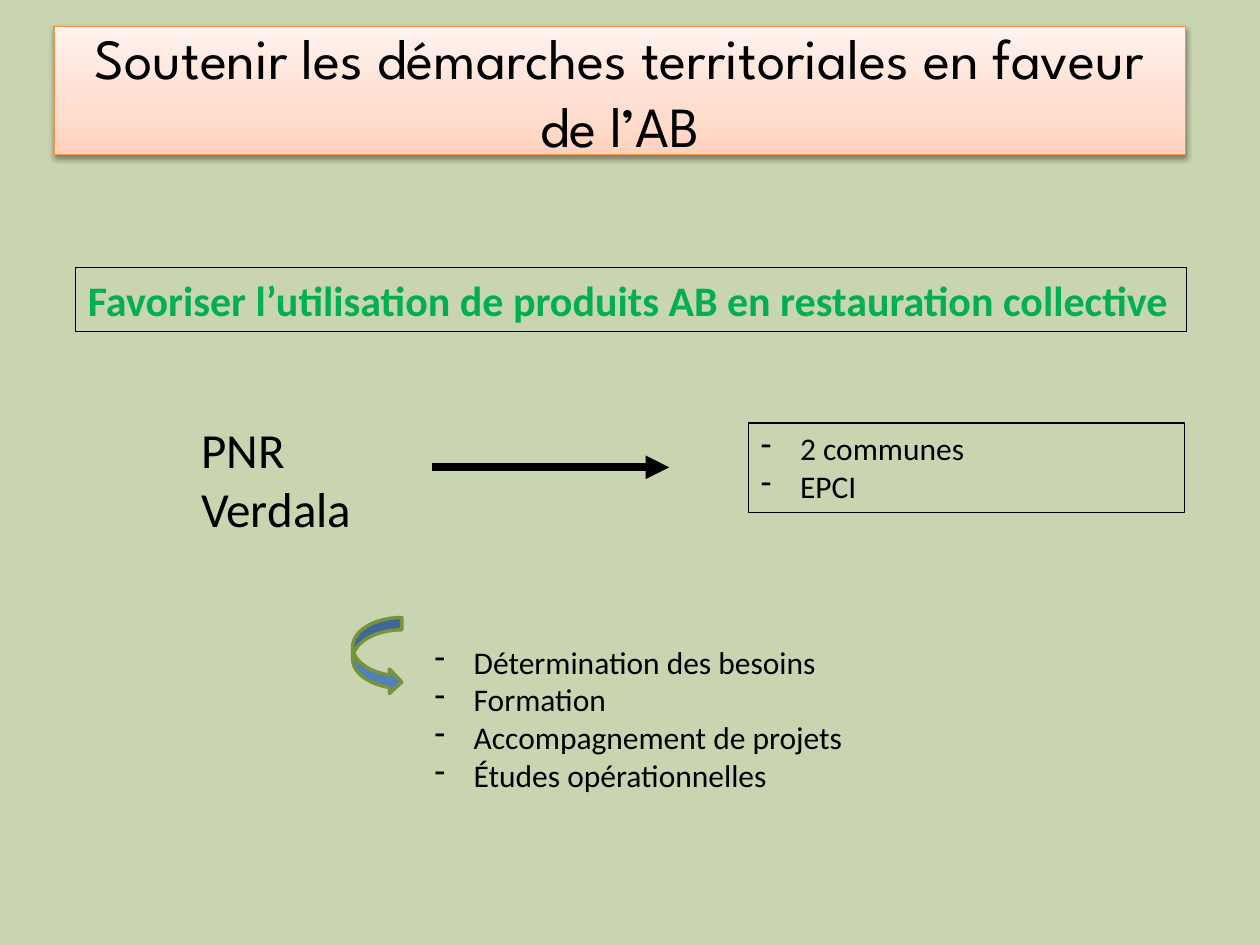
from copy import deepcopy

from lxml.etree import SubElement
from pptx import Presentation
from pptx.dml.color import RGBColor
from pptx.enum.shapes import MSO_CONNECTOR, MSO_SHAPE
from pptx.enum.text import MSO_ANCHOR, PP_ALIGN
from pptx.oxml import parse_xml
from pptx.oxml.ns import nsdecls, qn
from pptx.util import Cm, Pt

SAGE = RGBColor(0xC9, 0xD4, 0xB1)
OLIVE = RGBColor(0x77, 0x93, 0x3C)
BLUE = RGBColor(0x4F, 0x81, 0xBD)
GREEN = RGBColor(0x00, 0xB0, 0x50)
BLACK = RGBColor(0, 0, 0)
ORANGE = RGBColor(0xF6, 0x92, 0x40)
PEACH = [(0, RGBColor(0xFF, 0xD2, 0xBD)), (0.35, RGBColor(0xFF, 0xDE, 0xD0)),
         (1, RGBColor(0xFF, 0xF2, 0xED))]
SHADOW = (f'<a:effectLst {nsdecls("a")}>'
          '<a:outerShdw blurRad="40000" dist="20000" dir="5400000" rotWithShape="0">'
          '<a:srgbClr val="000000"><a:alpha val="38000"/></a:srgbClr>'
          '</a:outerShdw></a:effectLst>')


def add_box(slide, box, line=None, width=0.75, kind=MSO_SHAPE.RECTANGLE):
    shape = slide.shapes.add_shape(kind, *map(Cm, box))
    shape.shadow.inherit = False
    shape.fill.background()
    if line is None:
        shape.line.fill.background()
    else:
        shape.line.color.rgb = line
        shape.line.width = Pt(width)
    return shape


def add_dash(par):
    """Give the paragraph a hanging dash."""
    props = par._p.get_or_add_pPr()
    props.set("marL", str(Cm(0.79)))
    props.set("indent", str(-Cm(0.79)))
    SubElement(props, qn("a:buFontTx"))
    SubElement(props, qn("a:buChar")).set("char", "-")


def set_text(shape, lines, size, font="Calibri", color=BLACK, bold=False,
             align=PP_ALIGN.LEFT, anchor=MSO_ANCHOR.TOP, dash=False):
    frame = shape.text_frame
    frame.word_wrap = True
    frame.vertical_anchor = anchor
    frame.text = "\n".join(lines)
    for par in frame.paragraphs:
        par.alignment = align
        if dash:
            add_dash(par)
        for run in par.runs:
            run.font.name = font
            run.font.size = Pt(size)
            run.font.bold = bold
            run.font.color.rgb = color


def add_title(slide, box):
    shape = add_box(slide, box, ORANGE)
    fill = shape.fill
    fill.gradient()
    fill.gradient_angle = 90
    first = fill.gradient_stops[0]._gs
    first.addnext(deepcopy(first))
    for stop, (place, color) in zip(fill.gradient_stops, PEACH):
        stop.position = place
        stop.color.rgb = color
    props = shape._element.spPr
    props.replace(props.find(qn("a:effectLst")), parse_xml(SHADOW))
    set_text(shape, ["Soutenir les démarches territoriales en faveur de l’AB"], 32.4,
             font="League Spartan", align=PP_ALIGN.CENTER, anchor=MSO_ANCHOR.MIDDLE)


def add_goal(slide, box):
    set_text(add_box(slide, box, BLACK),
             ["Favoriser l’utilisation de produits AB en restauration collective"],
             24, color=GREEN, bold=True)


def add_link(slide, start, end, y):
    link = slide.shapes.add_connector(MSO_CONNECTOR.STRAIGHT,
                                      Cm(start), Cm(y), Cm(end), Cm(y))
    link.line.color.rgb = BLACK
    link.line.width = Pt(4.5)
    SubElement(link.line._get_or_add_ln(), qn("a:tailEnd")).set("type", "triangle")
    SubElement(link._element.spPr, qn("a:effectLst"))


def add_partners(slide, box):
    """Show the lead bodies at left, an arrow, and those they serve at right."""
    left, top, width, height = box
    lead = slide.shapes.add_textbox(*map(Cm, (left, top, 5.69, height)))
    set_text(lead, ["PNR", "Verdala"], 28)
    add_link(slide, left + 4.9, left + 9.68, top + 1.09)
    served = add_box(slide, (left + width - 8.79, top + 0.2, 8.79, 1.8), BLACK)
    set_text(served, ["2 communes", "EPCI"], 18, dash=True)


def add_actions(slide, box):
    left, top, width, height = box
    curve = add_box(slide, (left, top, 0.99, 1.55), OLIVE, 2,
                    MSO_SHAPE.CURVED_RIGHT_ARROW)
    curve.fill.solid()
    curve.fill.fore_color.rgb = BLUE
    steps = slide.shapes.add_textbox(
        *map(Cm, (left + 1.4, top + 0.38, width - 1.4, height - 0.38)))
    set_text(steps, ["Détermination des besoins", "Formation",
                     "Accompagnement de projets", "Études opérationnelles"],
             18, dash=True)


def main():
    deck = Presentation()
    deck.slide_width, deck.slide_height = Cm(25.4), Cm(19.05)
    slide = deck.slides.add_slide(deck.slide_layouts[6])
    slide.background.fill.solid()
    slide.background.fill.fore_color.rgb = SAGE
    add_title(slide, (1.09, 0.53, 22.81, 2.59))
    add_goal(slide, (1.52, 5.4, 22.4, 1.28))
    add_partners(slide, (3.81, 8.33, 20.07, 2.64))
    add_actions(slide, (7.11, 12.45, 15.6, 4.5))
    deck.save("out.pptx")


if __name__ == "__main__":
    main()
